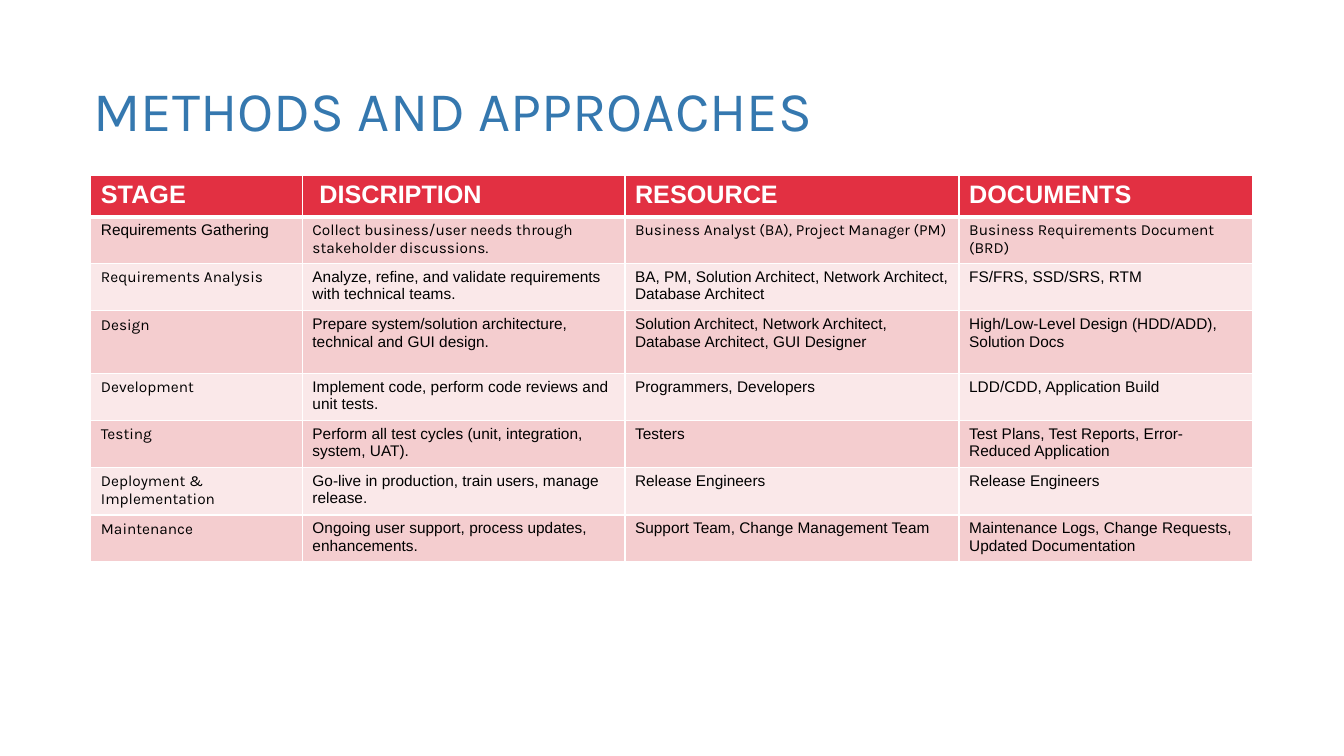
from lxml.etree import SubElement
from pptx import Presentation
from pptx.dml.color import RGBColor
from pptx.enum.text import MSO_ANCHOR
from pptx.oxml.ns import qn
from pptx.util import Cm, Pt


def rgb(value):
    return RGBColor.from_string(value)


def write(tf, text, font="Arial", size=11, color="000000", bold=False, spacing=None):
    tf.word_wrap = True
    p = tf.paragraphs[0]
    p.line_spacing = spacing
    r = p.add_run()
    r.text = text
    r.font.name = font
    r.font.size = Pt(size)
    r.font.bold = bold
    r.font.color.rgb = rgb(color)


prs = Presentation()
prs.slide_width, prs.slide_height = Cm(33.87), Cm(19.05)
s = prs.slides.add_slide(prs.slide_layouts[6])

title = s.shapes.add_textbox(Cm(2.11), Cm(1.98), Cm(19.96), Cm(3.3))
title.text_frame.vertical_anchor = MSO_ANCHOR.TOP
write(title.text_frame, "METHODS AND APPROACHES", font="Karla", size=40,
      color="3578AF", spacing=0.9)

rows = [
    ("STAGE", " DISCRIPTION", "RESOURCE", "DOCUMENTS"),
    ("Requirements Gathering",
     "Collect business/user needs through stakeholder discussions.",
     "Business Analyst (BA), Project Manager (PM)",
     "Business Requirements Document (BRD)"),
    ("Requirements Analysis",
     "Analyze, refine, and validate requirements with technical teams.",
     "BA, PM, Solution Architect, Network Architect, Database Architect",
     "FS/FRS, SSD/SRS, RTM"),
    ("Design",
     "Prepare system/solution architecture, technical and GUI design.",
     "Solution Architect, Network Architect, Database Architect, GUI Designer",
     "High/Low-Level Design (HDD/ADD), Solution Docs"),
    ("Development",
     "Implement code, perform code reviews and unit tests.",
     "Programmers, Developers",
     "LDD/CDD, Application Build"),
    ("Testing",
     "Perform all test cycles (unit, integration, system, UAT).",
     "Testers",
     "Test Plans, Test Reports, Error-Reduced Application"),
    ("Deployment & Implementation",
     "Go-live in production, train users, manage release.",
     "Release Engineers",
     "Release Engineers"),
    ("Maintenance",
     "Ongoing user support, process updates, enhancements.",
     "Support Team, Change Management Team",
     "Maintenance Logs, Change Requests, Updated Documentation"),
]
widths = [5.33, 8.13, 8.42, 7.39]
row_height, design_height = 1.04, 1.58

table = s.shapes.add_table(len(rows), len(widths), Cm(2.29), Cm(4.42),
                           Cm(sum(widths)), Cm(row_height * len(rows))).table
for column, width in zip(table.columns, widths):
    column.width = Cm(width)

for i, row in enumerate(rows):
    table.rows[i].height = Cm(design_height if row[0] == "Design" else row_height)
    for j, text in enumerate(row):
        cell = table.cell(i, j)
        tcPr = cell._tc.get_or_add_tcPr()
        for side in "LRTB":
            thick = (i, side) in ((0, "B"), (1, "T"))
            ln = SubElement(tcPr, qn(f"a:ln{side}"), w=str(Pt(3 if thick else 1)))
            SubElement(SubElement(ln, qn("a:solidFill")), qn("a:srgbClr"), val="FFFFFF")
        cell.fill.solid()
        if i == 0:
            cell.fill.fore_color.rgb = rgb("E23042")
            write(cell.text_frame, text, size=18, color="FFFFFF", bold=True)
        else:
            cell.fill.fore_color.rgb = rgb("F4CDCF" if i % 2 else "FAE8E9")
            karla = (i == 1) != (j == 0)
            write(cell.text_frame, text, font="Karla" if karla else "Arial")

prs.save("out.pptx")
